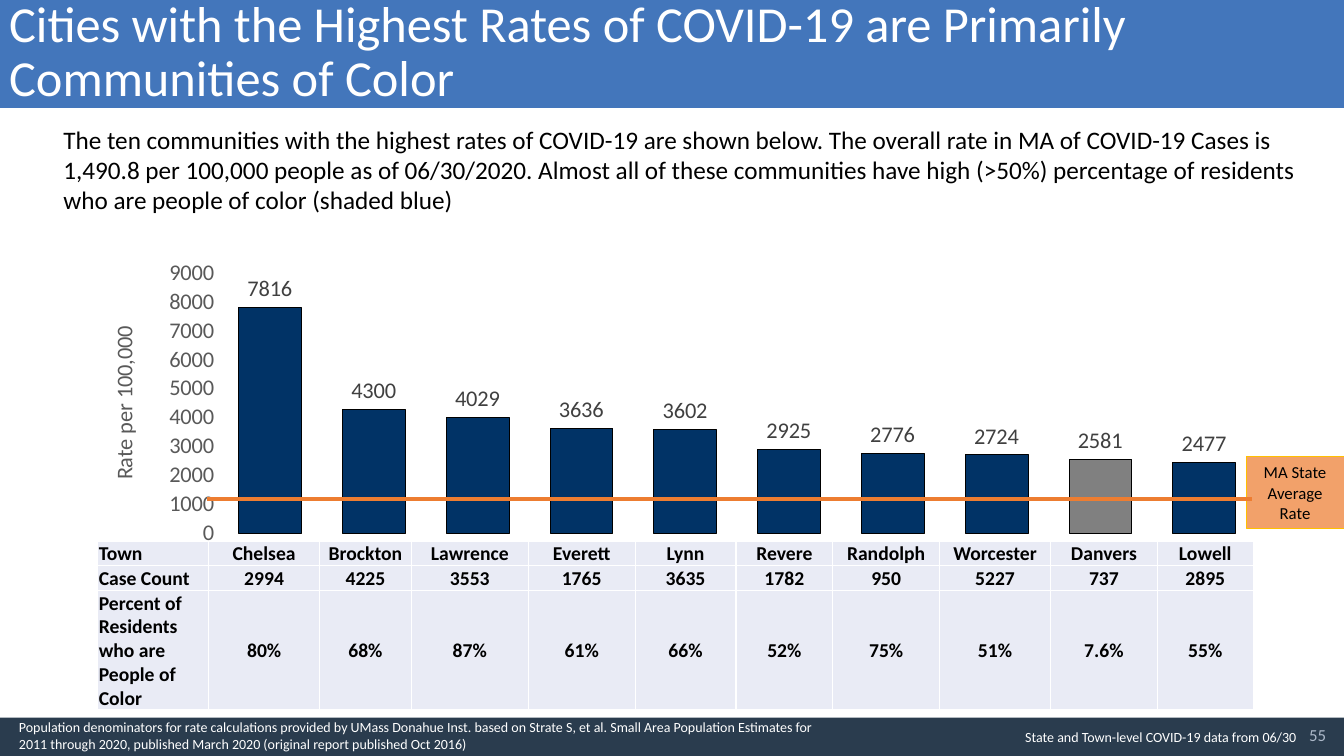
import pptx
import pptx.chart.data
import pptx.dml.color
import pptx.enum.chart
import pptx.enum.shapes
import pptx.enum.text
import pptx.oxml
import pptx.oxml.ns
import pptx.util
from pptx.util import Inches, Pt

FONT = "Calibri"
COLORS = {
    "title_band": "4376BB", "footer_band": "2A3C4E", "white": "FFFFFF",
    "black": "000000", "page_number": "ADB9CA", "bar": "013366",
    "gray_bar": "808080", "axis": "595959", "value": "404040",
    "average": "ED7D31", "callout": "F2A16A", "callout_edge": "FFC000",
    "cell": "E9EBF5",
}
TOWNS = [  # town, rate per 100,000, case count, percent people of color
    ("Chelsea", 7816, "2994", "80%"),
    ("Brockton", 4300, "4225", "68%"),
    ("Lawrence", 4029, "3553", "87%"),
    ("Everett", 3636, "1765", "61%"),
    ("Lynn", 3602, "3635", "66%"),
    ("Revere", 2925, "1782", "52%"),
    ("Randolph", 2776, "950", "75%"),
    ("Worcester", 2724, "5227", "51%"),
    ("Danvers", 2581, "737", "7.6%"),
    ("Lowell", 2477, "2895", "55%"),
]
ROW_HEADS = ("Town", "Case Count", "Percent of Residents who are People of Color")
COLUMN_WIDTHS = (1.1, 1.1, 0.91, 1.16, 1.06, 1, 0.96, 1.06, 1.1, 1.06, 0.95)
ROW_HEIGHTS = (0.24, 0.24, 1.17)
ALIGN = pptx.enum.text.PP_ALIGN
ANCHOR = pptx.enum.text.MSO_ANCHOR


def rgb(name):
    return pptx.dml.color.RGBColor.from_string(COLORS[name])


def style_font(font, size, color, bold=False):
    font.name, font.size, font.bold = FONT, Pt(size), bold
    font.color.rgb = rgb(color)


def write(frame, text, size, color, align=ALIGN.LEFT, bold=False):
    paragraph = frame.paragraphs[0]
    paragraph.alignment = align
    run = paragraph.add_run()
    run.text = text
    style_font(run.font, size, color, bold)


def add_text(slide, box, text, size, color, align=ALIGN.LEFT, anchor=ANCHOR.TOP, wrap=True):
    frame = slide.shapes.add_textbox(*map(Inches, box)).text_frame
    frame.word_wrap = wrap
    frame.vertical_anchor = anchor
    write(frame, text, size, color, align)


def add_rectangle(slide, box, fill):
    rectangle = slide.shapes.add_shape(
        pptx.enum.shapes.MSO_SHAPE.RECTANGLE, *map(Inches, box))
    rectangle.shadow.inherit = False
    rectangle.fill.solid()
    rectangle.fill.fore_color.rgb = rgb(fill)
    rectangle.line.fill.background()
    return rectangle


def add_header(slide, box):
    left, top, width, height = box
    band = add_rectangle(slide, box, "title_band")
    slide.shapes._spTree.insert(2, band._element)  # behind the title
    title = slide.shapes.title
    title.left, title.top = Inches(left - 0.01), Inches(top - 0.06)
    title.width, title.height = Inches(width + 0.01), Inches(height + 0.38)
    frame = title.text_frame
    frame.word_wrap = True
    frame.auto_size = pptx.enum.text.MSO_AUTO_SIZE.NONE
    frame.vertical_anchor = ANCHOR.TOP
    write(frame, "Cities with the Highest Rates of COVID-19 are Primarily "
          "Communities of Color", 36, "white")
    frame.paragraphs[0].line_spacing = 0.9


def add_footer(slide, box):
    left, top, width, height = box
    add_rectangle(slide, box, "footer_band")
    add_text(slide, (left + 10.26, top - 0.03, 2.99, 0.4), "55", 12,
             "page_number", ALIGN.RIGHT, ANCHOR.MIDDLE)
    add_text(slide, (left + 10.07, top + 0.06, 2.95, 0.27),
             "State and Town-level COVID-19 data from 06/30", 10, "white", wrap=False)
    add_text(slide, (left + 0.09, top - 0.04, 8.27, 0.44),
             "Population denominators for rate calculations provided by UMass Donahue Inst. "
             "based on\u00a0Strate S, et al. Small Area Population Estimates for 2011 through 2020, "
             "published March 2020 (original report published Oct 2016)", 10, "white")


def add_callout(slide, box):
    callout = add_rectangle(slide, box, "callout")
    callout.line.color.rgb = rgb("callout_edge")
    callout.line.width = Pt(0.5)
    callout.text_frame.word_wrap = True
    write(callout.text_frame, "MA State Average Rate", 12, "black", ALIGN.CENTER)


def place_plot(chart, x, y, w, h):
    """Fix the inner plot area at fractions of the chart's size."""
    plot_area = chart._chartSpace.chart.plotArea
    for layout in plot_area.findall(pptx.oxml.ns.qn("c:layout")):
        plot_area.remove(layout)
    sizes = "".join(f'<c:{tag} val="{value}"/>' for tag, value in
                    (("x", x), ("y", y), ("w", w), ("h", h)))
    plot_area.insert(0, pptx.oxml.parse_xml(
        f'<c:layout {pptx.oxml.ns.nsdecls("c")}><c:manualLayout>'
        '<c:layoutTarget val="inner"/><c:xMode val="edge"/><c:yMode val="edge"/>'
        f'{sizes}</c:manualLayout></c:layout>'))


def add_rate_chart(slide, box):
    data = pptx.chart.data.CategoryChartData(number_format="0")
    data.categories = [str(rank) for rank in range(1, len(TOWNS) + 1)]
    data.add_series("Series 1", [rate for _, rate, _, _ in TOWNS])
    chart = slide.shapes.add_chart(
        pptx.enum.chart.XL_CHART_TYPE.COLUMN_CLUSTERED, *map(Inches, box), data).chart
    chart.has_legend = chart.has_title = False
    style_font(chart.font, 16, "black")
    place_plot(chart, 0.116, 0.054, 0.871, 0.892)

    chart.category_axis.visible = False
    axis = chart.value_axis
    axis.has_major_gridlines = False
    axis.minimum_scale, axis.maximum_scale, axis.major_unit = 0, 9000, 1000
    axis.major_tick_mark = pptx.enum.chart.XL_TICK_MARK.NONE
    axis.format.line.fill.background()
    style_font(axis.tick_labels.font, 16, "axis")
    axis_title = axis.axis_title
    write(axis_title.text_frame, "Rate per 100,000", 16, "axis", ALIGN.CENTER)
    body = axis_title._element.find(".//" + pptx.oxml.ns.qn("a:bodyPr"))
    body.set("rot", "-5400000")
    body.set("vert", "horz")

    plot = chart.plots[0]
    plot.gap_width, plot.overlap, plot.vary_by_categories = 65, -27, False
    rates = plot.series[0]
    bars = [(rates, "bar")]
    bars += [(rates.points[i], "gray_bar") for i, town in enumerate(TOWNS)
             if float(town[3].rstrip("%")) <= 50]
    for bar, color in bars:
        bar.format.fill.solid()
        bar.format.fill.fore_color.rgb = rgb(color)
        bar.format.line.color.rgb = rgb("black")
        bar.format.line.width = Pt(0.25)
    labels = rates.data_labels
    labels.show_value = True
    labels.number_format, labels.number_format_is_linked = "0", False
    labels.position = pptx.enum.chart.XL_LABEL_POSITION.OUTSIDE_END
    style_font(labels.font, 16, "value")


def add_average_line(slide, left, right, y):
    line = slide.shapes.add_connector(
        pptx.enum.shapes.MSO_CONNECTOR.STRAIGHT,
        Inches(left), Inches(y), Inches(right), Inches(y))
    line.line.color.rgb = rgb("average")
    line.line.width = Pt(3)
    line._element.spPr.append(pptx.oxml.parse_xml(
        f'<a:effectLst {pptx.oxml.ns.nsdecls("a")}/>'))


def border_cell(cell):
    properties = cell._tc.get_or_add_tcPr()
    for index, side in enumerate(("lnL", "lnR", "lnT", "lnB")):
        properties.insert(index, pptx.oxml.parse_xml(
            f'<a:{side} {pptx.oxml.ns.nsdecls("a")} w="12700"><a:solidFill>'
            f'<a:srgbClr val="{COLORS["white"]}"/></a:solidFill></a:{side}>'))


def add_town_table(slide, box):
    rows = list(zip(ROW_HEADS, *((town, cases, share) for town, _, cases, share in TOWNS)))
    table = slide.shapes.add_table(len(rows), len(rows[0]), *map(Inches, box)).table
    for column, width in zip(table.columns, COLUMN_WIDTHS):
        column.width = Inches(width)
    for row, height in zip(table.rows, ROW_HEIGHTS):
        row.height = Inches(height)
    for r, texts in enumerate(rows):
        for c, text in enumerate(texts):
            cell = table.cell(r, c)
            cell.margin_left = cell.margin_right = cell.margin_top = Inches(0.01)
            cell.margin_bottom = 0
            middle = r == 2 or (r, c) == (0, 0)
            cell.vertical_anchor = ANCHOR.MIDDLE if middle else ANCHOR.BOTTOM
            cell.fill.solid()
            cell.fill.fore_color.rgb = rgb("cell")
            border_cell(cell)
            write(cell.text_frame, text, 14, "black",
                  ALIGN.CENTER if c else ALIGN.LEFT, bold=True)


def main():
    deck = pptx.Presentation()
    deck.slide_width, deck.slide_height = Inches(13.33), Inches(7.5)
    slide = deck.slides.add_slide(deck.slide_layouts[5])
    add_header(slide, (0, 0, 13.33, 1.07))
    add_text(slide, (0.53, 1.18, 12.72, 1.01),
             "The ten communities with the highest rates of COVID-19 are shown below. "
             "The overall rate in MA of COVID-19 Cases is 1,490.8 per 100,000 people as of "
             "06/30/2020. Almost all of these communities have high (>50%) percentage of "
             "residents who are people of color (shaded blue)", 18, "black")
    add_callout(slide, (12.36, 4.53, 0.97, 0.71))
    add_town_table(slide, (0.97, 5.37, 11.44, 1.65))
    add_footer(slide, (0, 7.12, 13.33, 0.38))
    add_rate_chart(slide, (0.79, 2.55, 11.82, 2.9))
    add_average_line(slide, 2.05, 12.42, 4.95)
    deck.save("out.pptx")


if __name__ == "__main__":
    main()
